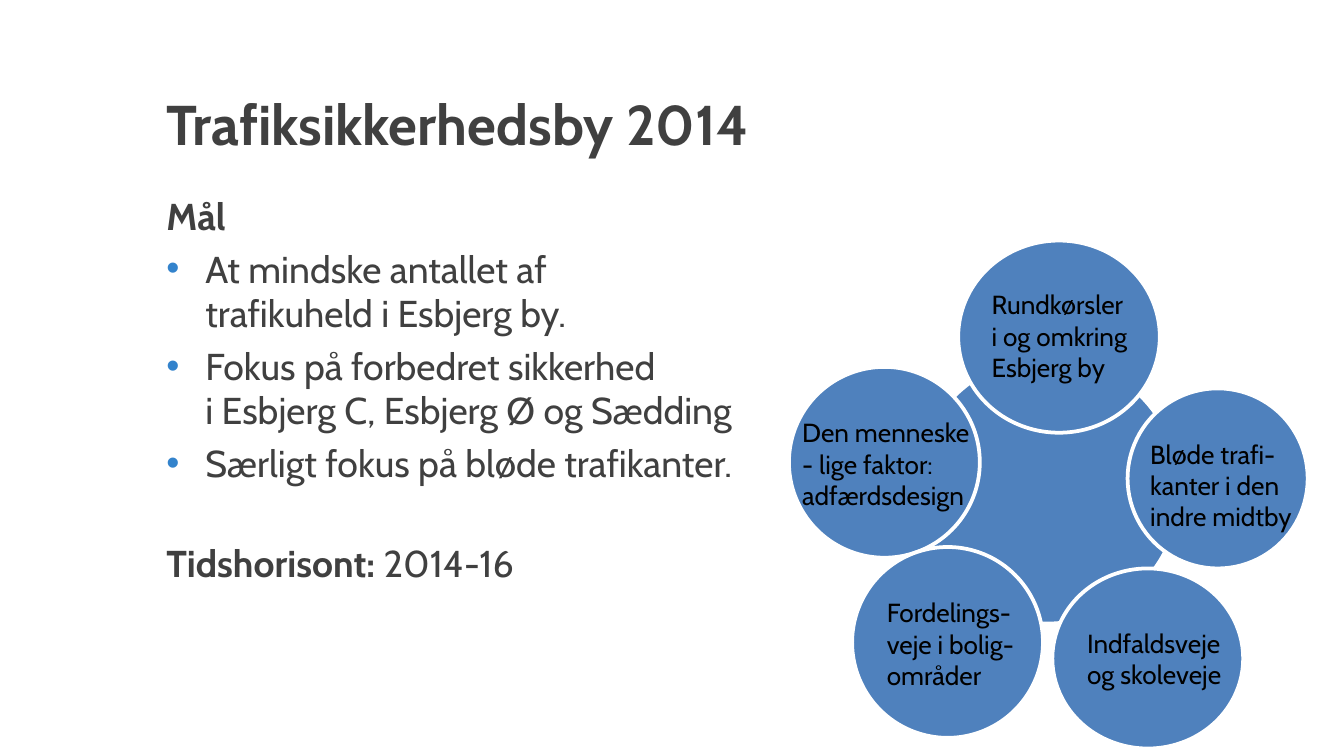
from lxml import etree
from pptx import Presentation
from pptx.dml.color import RGBColor
from pptx.enum.shapes import MSO_SHAPE
from pptx.enum.text import MSO_ANCHOR
from pptx.oxml.ns import qn
from pptx.util import Inches, Pt

OVAL = MSO_SHAPE.OVAL
TOP, MIDDLE = MSO_ANCHOR.TOP, MSO_ANCHOR.MIDDLE

THEME = {
    "font": "Cabin",
    "text": RGBColor.from_string("404040"),
    "label": RGBColor.from_string("000000"),
    "circle": RGBColor.from_string("4F81BD"),
    "outline": RGBColor.from_string("FFFFFF"),
    "bullet": "3383CC",
    "title_size": Pt(30),
    "body_size": Pt(20),
    "label_size": Pt(14),
    "body_gap": Pt(4),
    "section_gap": Pt(29.5),
    "outline_width": Pt(2),
}

# "\v" breaks a line inside a paragraph, "\n" starts a new paragraph.
TITLE = "Trafiksikkerhedsby 2014"
GOAL_HEADING = "Mål"
GOALS = [
    "At mindske antallet af \vtrafikuheld i Esbjerg by.",
    "Fokus på forbedret sikkerhed \vi Esbjerg C, Esbjerg Ø og Sædding",
    "Særligt fokus på bløde trafikanter.",
]
HORIZON_HEADING, HORIZON = "Tidshorisont: ", "2014-16"

SLIDE_WIDTH = Inches(10)
SLIDE_HEIGHT = SLIDE_WIDTH * 9 // 16
TITLE_AREA = (1.14, 0.6, 8.27, 0.63)
BODY_AREA = (1.14, 1.39, 8.27, 4.09)
HANGING = Inches(0.29)

HUB = (6.81, 2.66, 1.97, 1.98)
# Circle area, label area, label; back to front
FOCUS_AREAS = [
    ((7.83, 4.23, 1.42, 1.34), (7.99, 4.62, 1.28, 0.57),
     "Indfaldsveje\nog skoleveje"),
    ((8.39, 2.89, 1.34, 1.34), (8.46, 3.21, 1.29, 0.81),
     "Bløde trafi-\vkanter i den\vindre midtby"),
    ((7.13, 1.79, 1.5, 1.43), (7.28, 2.1, 1.35, 0.81),
     "Rundkørsler\ni og omkring\nEsbjerg by"),
    ((5.87, 2.73, 1.42, 1.42), (5.87, 3.05, 1.49, 0.81),
     "Den menneske\v- lige faktor: \vadfærdsdesign"),
    ((6.34, 4.07, 1.42, 1.42), (6.5, 4.39, 1.22, 0.81),
     "Fordelings-\vveje i bolig-\vområder"),
]


def set_font(paragraph, size, color, bold=None):
    font = paragraph.font
    font.name, font.size, font.bold = THEME["font"], size, bold
    font.color.rgb = color


def add_text_frame(slide, area, wrap=True, anchor=TOP):
    frame = slide.shapes.add_textbox(*map(Inches, area)).text_frame
    frame.word_wrap = wrap
    frame.vertical_anchor = anchor
    return frame


def add_bullet(paragraph):
    properties = paragraph._p.get_or_add_pPr()
    properties.set("marL", str(HANGING))
    properties.set("indent", str(-HANGING))
    color = etree.SubElement(properties, qn("a:buClr"))
    etree.SubElement(color, qn("a:srgbClr"), val=THEME["bullet"])
    etree.SubElement(properties, qn("a:buFont"), typeface="Arial")
    etree.SubElement(properties, qn("a:buChar"), char="•")


def add_title(slide):
    frame = add_text_frame(slide, TITLE_AREA, anchor=MIDDLE)
    frame.text = TITLE
    set_font(frame.paragraphs[0], THEME["title_size"], THEME["text"], True)


def add_body(slide):
    frame = add_text_frame(slide, BODY_AREA)
    size, color = THEME["body_size"], THEME["text"]

    heading = frame.paragraphs[0]
    heading.text = GOAL_HEADING
    set_font(heading, size, color, True)

    for goal in GOALS:
        item = frame.add_paragraph()
        item.text = goal
        item.space_before = THEME["body_gap"]
        add_bullet(item)
        set_font(item, size, color)

    horizon = frame.add_paragraph()
    horizon.space_before = THEME["section_gap"]
    set_font(horizon, size, color)
    for part, bold in ((HORIZON_HEADING, True), (HORIZON, False)):
        run = horizon.add_run()
        run.text = part
        run.font.bold = bold


def add_circle(slide, area):
    circle = slide.shapes.add_shape(OVAL, *map(Inches, area))
    circle.shadow.inherit = False
    circle.fill.solid()
    circle.fill.fore_color.rgb = THEME["circle"]
    circle.line.color.rgb = THEME["outline"]
    circle.line.width = THEME["outline_width"]


def add_label(slide, area, label):
    frame = add_text_frame(slide, area, wrap=False)
    frame.text = label
    for paragraph in frame.paragraphs:
        set_font(paragraph, THEME["label_size"], THEME["label"])


def main():
    presentation = Presentation()
    presentation.slide_width = SLIDE_WIDTH
    presentation.slide_height = SLIDE_HEIGHT
    slide = presentation.slides.add_slide(presentation.slide_layouts[6])

    add_title(slide)
    add_body(slide)
    add_circle(slide, HUB)
    for circle_area, _, _ in FOCUS_AREAS:
        add_circle(slide, circle_area)
    for _, label_area, label in FOCUS_AREAS:
        add_label(slide, label_area, label)

    presentation.save("out.pptx")


if __name__ == "__main__":
    main()
